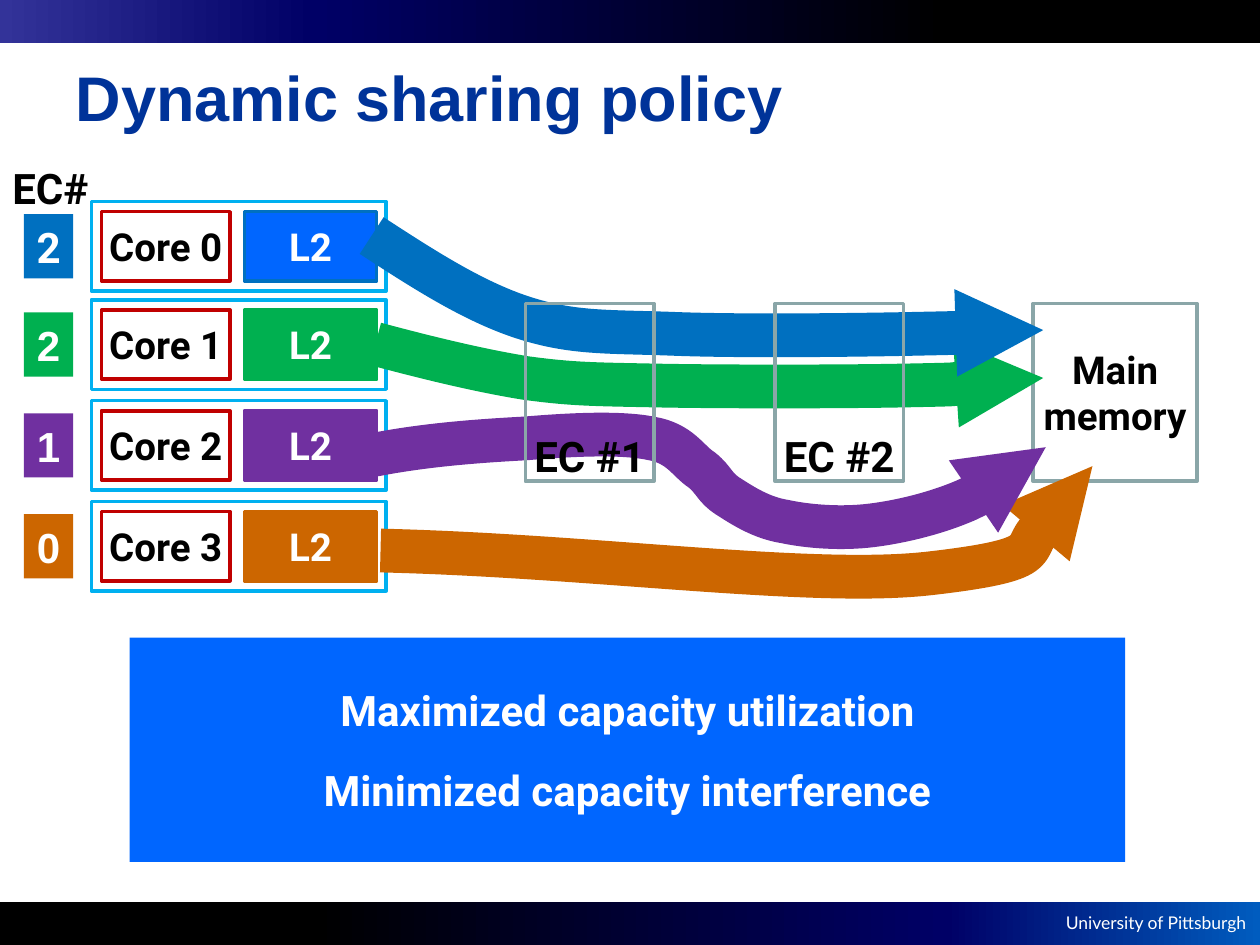
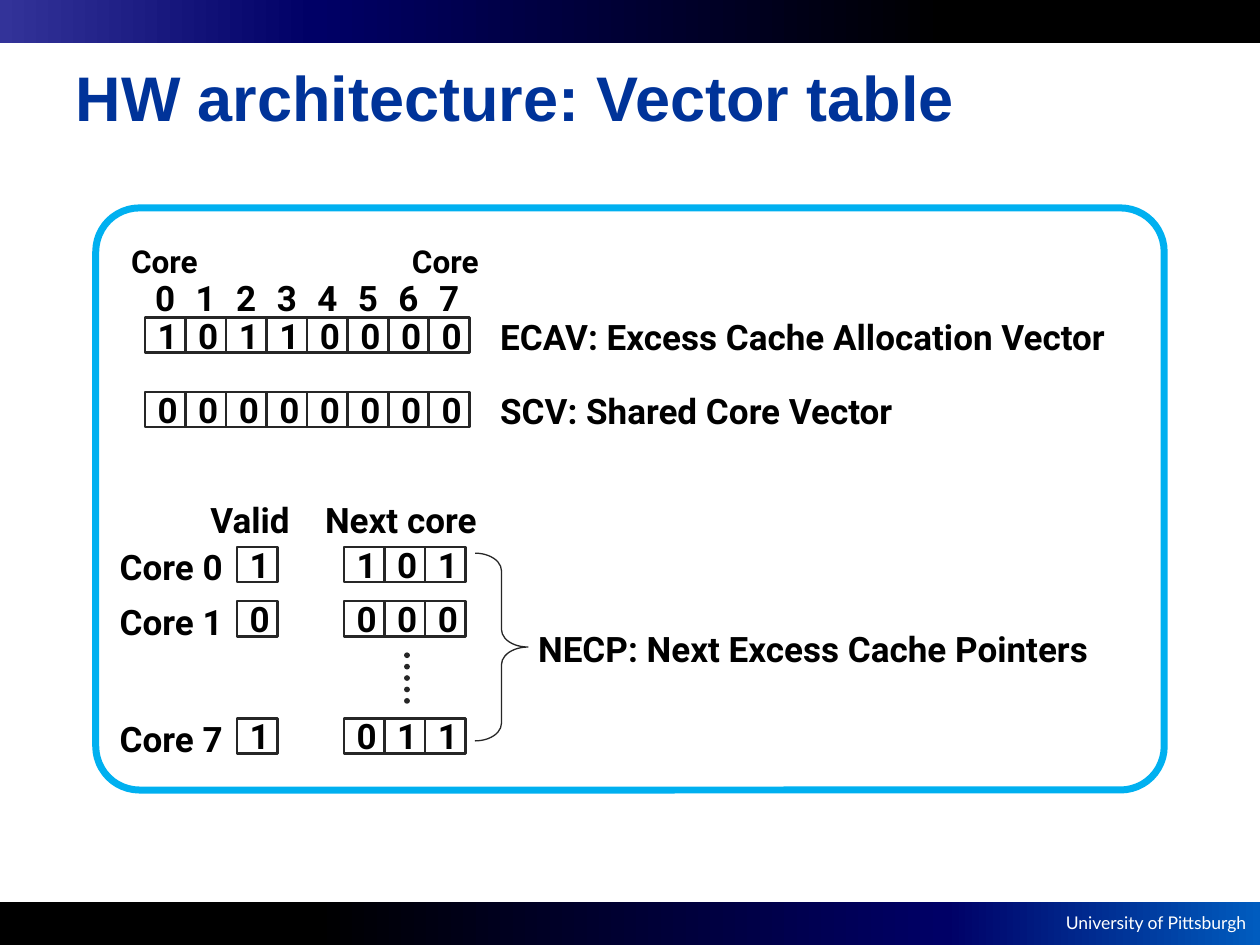
from dataclasses import dataclass

from lxml.etree import SubElement
from pptx import Presentation
from pptx.dml.color import RGBColor
from pptx.enum.dml import MSO_LINE
from pptx.enum.shapes import MSO_CONNECTOR, MSO_SHAPE as Kind
from pptx.enum.text import MSO_ANCHOR as Anchor, PP_ALIGN as Align
from pptx.oxml.ns import qn
from pptx.util import Inches, Pt


@dataclass(frozen=True)
class Theme:
    title: str = "003399"
    white: str = "FFFFFF"
    black: str = "000000"
    ink: str = "262626"
    sky: str = "00B0F0"
    red: str = "C00000"
    grey: str = "8AA6A8"
    bright: str = "0066FF"
    blue: str = "0070C0"
    green: str = "00B050"
    purple: str = "7030A0"
    orange: str = "CC6600"
    body_font: str = "Roboto"
    title_font: str = "Arial"
    footer_font: str = "Lato"
    title_size: int = 36
    large: int = 24
    medium: int = 22
    normal: int = 20
    small: int = 18
    footer: int = 10


theme = Theme()

# Grid: 100 columns by 75 rows of square cells
COLUMNS, ROWS = 100, 75
UNIT = Inches(0.1)


def draw(page, kind, at, fill=None, line=None, weight=2):
    """Add a preset shape, or a text box when kind is None, on the grid."""
    place = [round(value * UNIT) for value in at]
    if kind is None:
        return page.shapes.add_textbox(*place)
    shape = page.shapes.add_shape(kind, *place)
    shape.shadow.inherit = False
    if fill:
        shape.fill.solid()
        shape.fill.fore_color.rgb = RGBColor.from_string(fill)
    else:
        shape.fill.background()
    if line:
        shape.line.color.rgb = RGBColor.from_string(line)
        shape.line.width = Pt(weight)
    else:
        shape.line.fill.background()
    return shape


def write(shape, text, size, color=theme.black, align=Align.CENTER,
          anchor=Anchor.MIDDLE, font=theme.body_font, bold=True, gap=0):
    """Fill a shape with one paragraph per line of text."""
    frame = shape.text_frame
    frame.word_wrap = False
    frame.vertical_anchor = anchor
    frame.margin_left = frame.margin_right = 0
    frame.margin_top = frame.margin_bottom = 0
    frame.text = text
    for number, para in enumerate(frame.paragraphs):
        para.alignment = align
        para.space_before = Pt(gap if number else 0)
        para.font.name = font
        para.font.size = Pt(size)
        para.font.bold = bold
        para.font.color.rgb = RGBColor.from_string(color)


deck = Presentation()
deck.slide_width, deck.slide_height = COLUMNS * UNIT, ROWS * UNIT
layout = deck.slide_layouts[5]

# Title position, shared through the layout
heading = layout.placeholders[0]
heading.left, heading.top = 5 * UNIT, round(1.4 * UNIT)
heading.width, heading.height = 90 * UNIT, round(12.5 * UNIT)

# Slides and their titles
pages = []
for title in ("Dynamic sharing policy", "HW architecture: Vector table"):
    page = deck.slides.add_slide(layout)
    page.shapes.title.text = title
    para = page.shapes.title.text_frame.paragraphs[0]
    para.alignment = Align.LEFT
    para.font.name = theme.title_font
    para.font.size = Pt(theme.title_size)
    para.font.bold = True
    para.font.color.rgb = RGBColor.from_string(theme.title)
    pages.append(page)
policy, vectors = pages

# Gradient bands and footer, moved to the shared layout
BAND = 3.4
bands = [
    (ROWS - BAND, ("000000", "000000", "000066", "005CBF")),
    (0, ("333399", "000066", "000000", "000000")),
]
shared = []
for top, colors in bands:
    band = draw(policy, Kind.RECTANGLE, (0, top, COLUMNS, BAND))
    band.fill.gradient()
    band.fill.gradient_angle = 0
    stops = band.element.xpath(".//a:gsLst")[0]
    del stops[:]
    for share, color in zip((0, 25, 75, 100), colors):
        stop = SubElement(stops, qn("a:gs"), pos=str(share * 1000))
        SubElement(stop, qn("a:srgbClr"), val=color)
    shared.append(band)
footer = draw(policy, None, (83.3, 71.9, 15.6, 2.7))
write(footer, "University of Pittsburgh", theme.footer, theme.white,
      Align.RIGHT, font=theme.footer_font, bold=False)
shared.append(footer)
for number, shape in enumerate(shared, start=20):
    shape.element.xpath(".//p:cNvPr")[0].set("id", str(number))
    layout.shapes.element.append(shape.element)

# Slide 1: cores with their L2 caches and excess cache counts
cores = [
    (16, theme.blue, theme.bright, "2", theme.body_font),
    (23.8, theme.green, theme.green, "2", theme.title_font),
    (31.8, theme.purple, theme.purple, "1", theme.title_font),
    (39.8, theme.orange, theme.orange, "0", theme.title_font),
]
for number, (top, color, cache_fill, count, font) in enumerate(cores):
    draw(policy, Kind.RECTANGLE, (7.25, top, 23.4, 7.1), theme.white, theme.sky)
    cache = draw(policy, Kind.RECTANGLE, (19.4, top + 0.8, 10.5, 5.5),
                 cache_fill, color)
    write(cache, "L2", theme.medium, theme.white)
    core = draw(policy, Kind.RECTANGLE, (8.05, top + 0.8, 10.2, 5.5),
                theme.white, theme.red)
    write(core, f"Core {number}", theme.medium)
    badge = draw(policy, Kind.RECTANGLE, (1.9, top + 1, 3.9, 5.1), color)
    write(badge, count, theme.large, theme.white, font=font)
write(draw(policy, None, (0, 12.4, 8, 5)), "EC#", theme.large)

# Summary and main memory
summary = draw(policy, Kind.RECTANGLE, (10.3, 50.6, 79, 17.8), theme.bright)
write(summary, "Maximized capacity utilization\nMinimized capacity interference",
      theme.large, theme.white, gap=17)
memory = draw(policy, Kind.RECTANGLE, (82, 24.1, 13, 14.1), line=theme.grey)
write(memory, "Main\nmemory", theme.medium)

# Curved arrows: a start, then three Bézier points a curve, in tenths of a cell
flows = [
    (theme.orange, [(302, 437), (472, 441), (645, 466), (739, 455),
                    (834, 444), (840, 394), (867, 370)]),
    (theme.purple, [(297, 361), (338, 353), (380, 350), (417, 348),
                    (453, 345), (493, 343), (517, 348),
                    (540, 352), (546, 366), (557, 373),
                    (567, 381), (567, 387), (578, 394),
                    (589, 401), (604, 411), (623, 414),
                    (642, 418), (668, 420), (692, 417),
                    (716, 414), (744, 407), (767, 397),
                    (790, 386), (820, 361), (830, 355)]),
    (theme.green, [(298, 273), (339, 284), (380, 294), (417, 300),
                   (454, 305), (470, 305), (520, 306),
                   (570, 307), (667, 307), (718, 306),
                   (770, 305), (799, 302), (828, 300)]),
    (theme.blue, [(295, 187), (335, 213), (375, 239), (415, 252),
                  (455, 265), (483, 263), (535, 265),
                  (587, 267), (676, 266), (725, 265),
                  (774, 264), (801, 263), (828, 262)]),
]
for color, points in flows:
    builder = policy.shapes.build_freeform(*points[0], scale=UNIT / 10)
    builder.add_line_segments(points[1:], close=False)
    flow = builder.convert_to_shape()
    flow.shadow.inherit = False
    flow.fill.background()
    flow.line.color.rgb = RGBColor.from_string(color)
    flow.line.width = Pt(25)
    outline = flow.element.xpath(".//a:path")[0]
    steps = outline.findall(qn("a:lnTo"))
    for first in range(0, len(steps), 3):
        curve = SubElement(outline, qn("a:cubicBezTo"))
        for step in steps[first:first + 3]:
            curve.append(step[0])
            outline.remove(step)
    stroke = flow.element.xpath(".//a:ln")[0]
    SubElement(stroke, qn("a:tailEnd"), type="triangle", w="sm", len="sm")

# Excess caches over the arrows
for number, left in enumerate((41.7, 61.5), start=1):
    excess = draw(policy, Kind.RECTANGLE, (left, 24.1, 10.2, 14.1), line=theme.grey)
    write(excess, f"EC #{number}", theme.large, anchor=Anchor.BOTTOM)

# Slide 2: frame around the vector table
frame = draw(vectors, Kind.ROUNDED_RECTANGLE, (7.6, 16.5, 84.8, 46.2),
             line=theme.sky, weight=4)
frame.adjustments[0] = 0.075

# Bit vectors, each a row of equal cells
CELL_WIDTH, CELL_HEIGHT = 3.22, 2.8
VECTOR_LEFT, VALID_LEFT, NEXT_LEFT = 11.5, 18.8, 27.3
pointers = [(43.4, "Core 0", "1", "101"), (47.7, "Core 1", "0", "000"),
            (57, "Core 7", "1", "011")]
bit_rows = [(VECTOR_LEFT, 25.2, "10110000"), (VECTOR_LEFT, 31.1, "00000000")]
for top, core, valid, following in pointers:
    bit_rows += [(VALID_LEFT, top, valid), (NEXT_LEFT, top, following)]
for left, top, bits in bit_rows:
    for column, bit in enumerate(bits):
        cell = draw(vectors, Kind.RECTANGLE,
                    (left + column * CELL_WIDTH, top, CELL_WIDTH, CELL_HEIGHT),
                    line=theme.ink, weight=1.5)
        write(cell, bit, theme.normal)
        cell.text_frame.margin_left = Inches(0.04)

# Core numbers above the vectors
for column in range(8):
    number = draw(vectors, None,
                  (VECTOR_LEFT + column * CELL_WIDTH, 21.4, CELL_WIDTH, 4.4))
    write(number, str(column), theme.normal)

# Labels
labels = [
    (10.4, 18.7, "Core", theme.small),
    (32.7, 18.7, "Core", theme.small),
    (39.7, 24.5, "ECAV: Excess Cache Allocation Vector", theme.normal),
    (39.7, 30.4, "SCV: Shared Core Vector", theme.normal),
    (42.7, 49.3, "NECP: Next Excess Cache Pointers", theme.normal),
    (16.7, 39, "Valid", theme.normal),
    (25.8, 39, "Next core", theme.normal),
]
labels += [(9.5, top - 0.6, core, theme.normal) for top, core, *_ in pointers]
for left, top, text, size in labels:
    label = draw(vectors, None, (left, top, len(text) * 1.4, size * 0.22))
    write(label, text, size, align=Align.LEFT)

# Brace and dots for the pointer rows
brace = draw(vectors, Kind.RIGHT_BRACE, (37.7, 43.9, 4.2, 14.9),
             line=theme.ink, weight=0.75)
brace.adjustments[0], brace.adjustments[1] = 0.333, 0.5
dots_x = round(32.3 * UNIT)
dots = vectors.shapes.add_connector(MSO_CONNECTOR.STRAIGHT, dots_x, 52 * UNIT,
                                    dots_x, round(56.1 * UNIT))
dots.line.color.rgb = RGBColor.from_string(theme.ink)
dots.line.width = Pt(3.25)
dots.line.dash_style = MSO_LINE.ROUND_DOT
dots.element.xpath(".//a:ln")[0].set("cap", "rnd")
SubElement(dots.element.spPr, qn("a:effectLst"))

deck.save("out.pptx")
